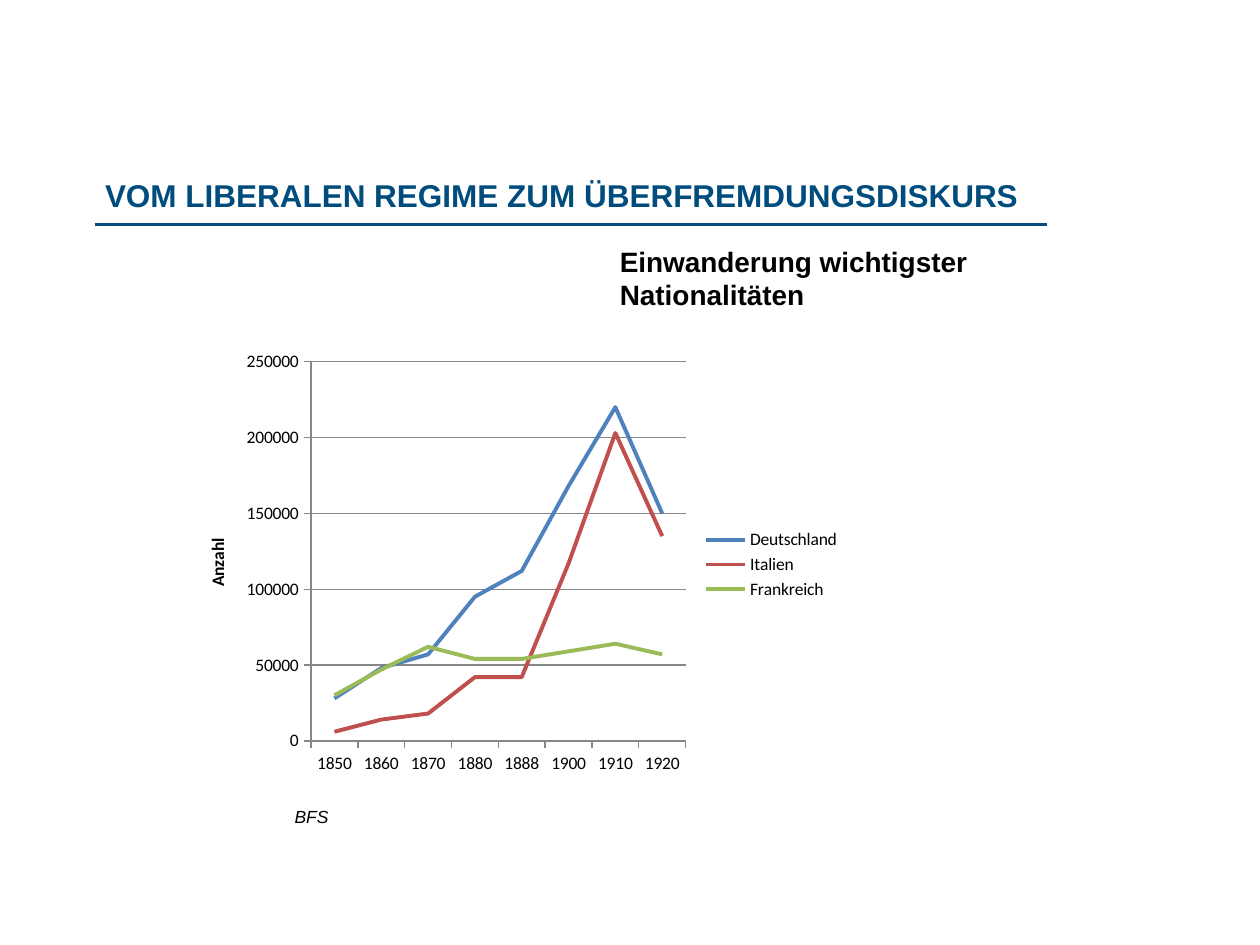
from lxml.etree import SubElement
from pptx import Presentation
from pptx.chart.data import CategoryChartData
from pptx.dml.color import RGBColor
from pptx.enum.chart import XL_CHART_TYPE, XL_LEGEND_POSITION, XL_MARKER_STYLE, XL_TICK_MARK
from pptx.enum.shapes import MSO_CONNECTOR
from pptx.enum.text import MSO_ANCHOR, PP_ALIGN
from pptx.oxml import parse_xml
from pptx.oxml.ns import nsdecls, qn
from pptx.util import Pt

COLORS = {
    "title": "004C7D",
    "text": "000000",
    "grid": "878787",
    "Deutschland": "4F81BD",
    "Italien": "C0504D",
    "Frankreich": "9BBB59",
}
YEARS = ["1850", "1860", "1870", "1880", "1888", "1900", "1910", "1920"]
IMMIGRATION = {
    "Deutschland": [28000, 48000, 57000, 95000, 112000, 168000, 220000, 150000],
    "Italien": [6000, 14000, 18000, 42000, 42000, 117000, 203000, 135000],
    "Frankreich": [30000, 47000, 62000, 54000, 54000, 59000, 64000, 57000],
}
PLOT_AREA = {"x": 0.19, "y": 0.04, "w": 0.56, "h": 0.86}


def color(name):
    """Return the named colour."""
    return RGBColor.from_string(COLORS[name])


def write_text(shape, text, size, color_name="text", bold=False, italic=False, margins=(0, 0)):
    """Write one formatted run into a shape."""
    frame = shape.text_frame
    frame.word_wrap = True
    frame.vertical_anchor = MSO_ANCHOR.TOP
    frame.margin_left = frame.margin_right = Pt(margins[0])
    frame.margin_top = frame.margin_bottom = Pt(margins[1])
    paragraph = frame.paragraphs[0]
    paragraph.alignment = PP_ALIGN.LEFT
    run = paragraph.add_run()
    run.text = text
    run.font.name = "Arial"
    run.font.size = Pt(size)
    run.font.bold = bold
    run.font.italic = italic
    run.font.color.rgb = color(color_name)


def add_heading(slide, left, top, width, height):
    """Place the title and the rule below it."""
    title = slide.shapes.title
    title.left, title.top, title.width, title.height = Pt(left + 6), Pt(top), Pt(width + 12), Pt(height)
    write_text(title, "VOM LIBERALEN REGIME ZUM ÜBERFREMDUNGSDISKURS", 18, "title", bold=True)
    rule_top = Pt(top + 27.4)
    rule = slide.shapes.add_connector(
        MSO_CONNECTOR.STRAIGHT, Pt(left), rule_top, Pt(left + width), rule_top)
    rule.line.color.rgb = color("title")
    rule.line.width = Pt(2)
    SubElement(rule.element.spPr, qn("a:effectLst"))


def add_label(slide, left, top, width, height, text, size, **style):
    """Place a text box."""
    box = slide.shapes.add_textbox(Pt(left), Pt(top), Pt(width), Pt(height))
    write_text(box, text, size, **style)


def format_axis(axis):
    """Set the line and tick marks of an axis."""
    axis.format.line.color.rgb = color("grid")
    axis.format.line.width = Pt(0.75)
    axis.major_tick_mark = XL_TICK_MARK.OUTSIDE
    axis.minor_tick_mark = XL_TICK_MARK.NONE


def set_plot_layout(chart):
    """Fix the inner plot area as fractions of the chart."""
    plot_area = chart.plots[0]._element.getparent()
    for layout in plot_area.findall(qn("c:layout")):
        plot_area.remove(layout)
    fractions = "".join(f'<c:{key} val="{value}"/>' for key, value in PLOT_AREA.items())
    plot_area.insert(0, parse_xml(
        f'<c:layout {nsdecls("c")}><c:manualLayout><c:layoutTarget val="inner"/>'
        f'<c:xMode val="edge"/><c:yMode val="edge"/>{fractions}</c:manualLayout></c:layout>'))


def add_immigration_chart(slide, left, top, width, height):
    """Place the line chart of immigration by nationality."""
    data = CategoryChartData(number_format="General")
    data.categories = YEARS
    for country, values in IMMIGRATION.items():
        data.add_series(country, values)
    chart = slide.shapes.add_chart(
        XL_CHART_TYPE.LINE, Pt(left), Pt(top), Pt(width), Pt(height), data).chart
    chart.font.name = "Calibri"
    chart.font.size = Pt(10)
    chart.font.color.rgb = color("text")
    chart.has_title = False
    chart.has_legend = True
    chart.legend.position = XL_LEGEND_POSITION.RIGHT
    chart.legend.include_in_layout = False
    chart.plots[0].vary_by_categories = False
    for series in chart.plots[0].series:
        series.smooth = False
        series.marker.style = XL_MARKER_STYLE.NONE
        series.format.line.color.rgb = color(series.name)
        series.format.line.width = Pt(2.25)
    format_axis(chart.category_axis)
    value_axis = chart.value_axis
    format_axis(value_axis)
    value_axis.minimum_scale = 0
    value_axis.maximum_scale = 250000
    value_axis.major_unit = 50000
    value_axis.has_major_gridlines = True
    value_axis.major_gridlines.format.line.color.rgb = color("grid")
    value_axis.major_gridlines.format.line.width = Pt(0.75)
    run = value_axis.axis_title.text_frame.paragraphs[0].add_run()
    run.text = "Anzahl"
    run.font.name = "Calibri"
    run.font.size = Pt(10)
    run.font.bold = True
    run.font.color.rgb = color("text")
    set_plot_layout(chart)


def main():
    """Build the slide and save it."""
    presentation = Presentation()
    presentation.slide_width = Pt(720)
    presentation.slide_height = Pt(540)
    slide = presentation.slides.add_slide(presentation.slide_layouts[5])
    add_heading(slide, 54, 100.8, 544.3, 46)
    add_label(slide, 354.2, 139.7, 304, 39, "Einwanderung wichtigster Nationalitäten", 16, bold=True)
    add_immigration_chart(slide, 105.1, 196.6, 382.3, 252)
    add_label(slide, 161.3, 457.2, 313.9, 19.4, "BFS", 10, italic=True, margins=(7.2, 3.6))
    presentation.save("out.pptx")


if __name__ == "__main__":
    main()
